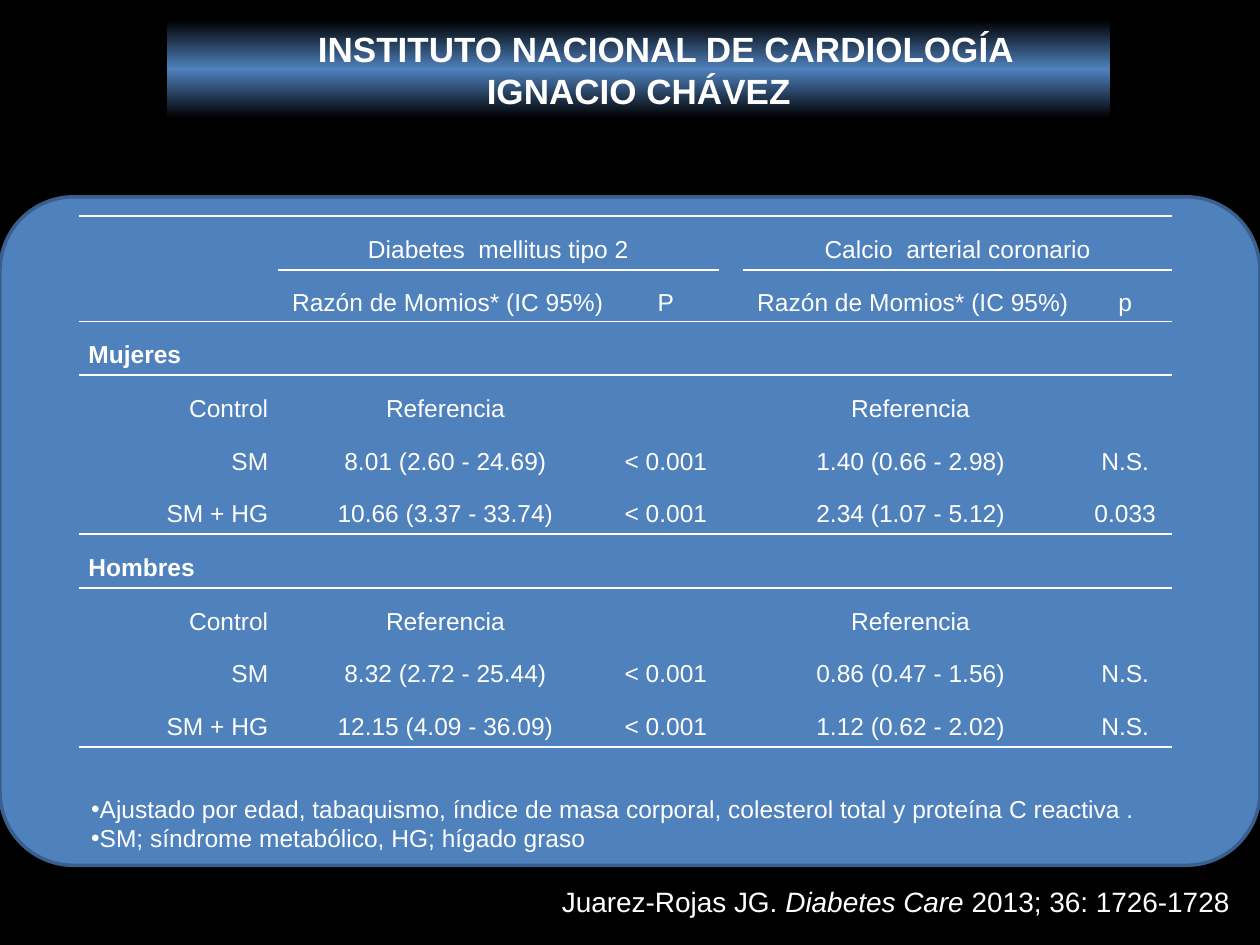
"""Build a slide with a table of odds ratios for diabetes and coronary calcium."""
from copy import deepcopy
from typing import NamedTuple

from lxml import etree
from pptx import Presentation
from pptx.dml.color import RGBColor
from pptx.enum.shapes import MSO_SHAPE
from pptx.enum.text import MSO_ANCHOR, MSO_AUTO_SIZE, PP_ALIGN
from pptx.oxml.ns import qn
from pptx.util import Pt

LEFT, MID, RIGHT = PP_ALIGN.LEFT, PP_ALIGN.CENTER, PP_ALIGN.RIGHT
CENTRE = MSO_ANCHOR.MIDDLE
FIXED = MSO_AUTO_SIZE.NONE
RECT, ROUND = MSO_SHAPE.RECTANGLE, MSO_SHAPE.ROUNDED_RECTANGLE
BLACK = RGBColor(0x00, 0x00, 0x00)
WHITE = RGBColor(0xFF, 0xFF, 0xFF)
BLUE = RGBColor(0x4F, 0x81, 0xBD)
NAVY = RGBColor(0x3A, 0x5F, 0x8C)
PLAIN = "{2D5ABB26-0587-4C30-8999-92F81FD0307C}"
WIDTHS = (113.8, 191.5, 60.5, 13, 191.5, 53.8)
TALL, SHORT = 30.7, 29.5
GAP = 3


class Row(NamedTuple):
    label: str = ""
    odds: str = ""
    p: str = ""
    gap: str = ""
    calc: str = ""
    calc_p: str = ""


RATIO = "Razón de Momios* (IC 95%)"
CONTROL = Row("Control", "Referencia", calc="Referencia")
ROWS = (
    Row(odds="Diabetes  mellitus tipo 2", calc="Calcio  arterial coronario"),
    Row("", RATIO, "P", "", RATIO, "p"),
    Row("Mujeres"),
    CONTROL,
    Row("SM", "8.01 (2.60 - 24.69)", "< 0.001", "", "1.40 (0.66 - 2.98)", "N.S."),
    Row("SM + HG", "10.66 (3.37 - 33.74)", "< 0.001", "", "2.34 (1.07 - 5.12)", "0.033"),
    Row("Hombres"),
    CONTROL,
    Row("SM", "8.32 (2.72 - 25.44)", "< 0.001", "", "0.86 (0.47 - 1.56)", "N.S."),
    Row("SM + HG", "12.15 (4.09 - 36.09)", "< 0.001", "", "1.12 (0.62 - 2.02)", "N.S."),
)
GROUPS = (2, 6)
NOTES = (
    "Ajustado por edad, tabaquismo, índice de masa corporal, "
    "colesterol total y proteína C reactiva .\n"
    "SM; síndrome metabólico, HG; hígado graso"
)


def write(frame, text: str, *, size: float = 14, bold: bool = False,
          align=LEFT, space: float = 1, bullet: str = "") -> None:
    """Fill a frame line by line, with underscores around italic words."""
    for i, line in enumerate(text.split("\n")):
        para = frame.add_paragraph() if i else frame.paragraphs[0]
        para.alignment, para.line_spacing = align, space
        if bullet:
            props = para._p.get_or_add_pPr()
            etree.SubElement(props, qn("a:buFont"), typeface="Arial")
            etree.SubElement(props, qn("a:buChar"), char=bullet)
        for j, part in enumerate(line.split("_")):
            run = para.add_run()
            run.text = part
            font = run.font
            font.name, font.size = "Arial", Pt(size)
            font.bold, font.italic = bold, j % 2 == 1
            font.color.rgb = WHITE


def block(slide, kind, left: float, top: float, width: float, height: float):
    """Add a flat blue shape without a line."""
    shape = slide.shapes.add_shape(kind, Pt(left), Pt(top), Pt(width), Pt(height))
    shape.shadow.inherit = False
    shape.fill.solid()
    shape.fill.fore_color.rgb = BLUE
    shape.line.fill.background()
    return shape


def banner(slide) -> None:
    """Format the title as a band that fades to black."""
    title = slide.shapes.title
    title.left, title.top, title.width, title.height = Pt(95.5), Pt(11.5), Pt(539), Pt(56)
    fill = title.fill
    fill.gradient()
    fill.gradient_angle = 270
    stops = title._element.spPr.find(".//" + qn("a:gsLst"))
    stops.insert(1, deepcopy(stops[0]))
    for stop, place, tint in zip(fill.gradient_stops, (0, 0.5, 1), (BLACK, BLUE, BLACK)):
        stop.position, stop.color.rgb = place, tint
    frame = title.text_frame
    frame.auto_size, frame.vertical_anchor = FIXED, CENTRE
    frame.margin_left = frame.margin_right = Pt(8)
    frame.margin_top = frame.margin_bottom = Pt(4)
    write(frame, "\tINSTITUTO NACIONAL DE CARDIOLOGÍA \nIGNACIO CHÁVEZ",
          size=20, bold=True, align=MID)


def ruled(edge: int, col: int) -> bool:
    """Tell whether a rule runs along the top of this row."""
    return edge in (0, *GROUPS, len(ROWS)) or edge == 1 and col not in (0, GAP)


def border(cell, row: int, col: int) -> None:
    """Draw the rules above and below a cell."""
    props = cell._tc.get_or_add_tcPr()
    sides = [tag for tag, edge in (("a:lnT", row), ("a:lnB", row + 1)) if ruled(edge, col)]
    for i, tag in enumerate(sides):
        line = etree.Element(qn(tag), w=str(Pt(1)))
        fill = etree.SubElement(line, qn("a:solidFill"))
        etree.SubElement(fill, qn("a:srgbClr"), val=str(WHITE))
        props.insert(i, line)


def aligned(row: int, col: int):
    """Return the alignment of a cell."""
    if col == 0:
        return LEFT if row in GROUPS else RIGHT
    return RIGHT if row == 1 and col in (1, 4) else MID


def results(slide) -> None:
    """Add the table of ratios."""
    frame = slide.shapes.add_table(len(ROWS), len(WIDTHS), Pt(45), Pt(123.5),
                                   Pt(sum(WIDTHS)), Pt(304))
    table = frame.table
    table.first_row = table.horz_banding = False
    table._tbl.tblPr.find(qn("a:tableStyleId")).text = PLAIN
    for column, width in zip(table.columns, WIDTHS):
        column.width = Pt(width)
    for r, row in enumerate(ROWS):
        table.rows[r].height = Pt(SHORT if r in (1, 4, 8) else TALL)
        for c, text in enumerate(row):
            cell = table.cell(r, c)
            cell.fill.background()
            cell.vertical_anchor = CENTRE
            cell.margin_left = cell.margin_right = Pt(5.5)
            cell.margin_top = cell.margin_bottom = 0
            border(cell, r, c)
            if text:
                write(cell.text_frame, text, bold=r in GROUPS,
                      align=aligned(r, c), space=1.5)
    for c in (1, 4):
        table.cell(0, c).merge(table.cell(0, c + 1))


def notes(slide) -> None:
    """Add the footnotes on a translucent strip."""
    strip = block(slide, RECT, 45, 450, 624, 41)
    tint = strip._element.spPr.find(".//" + qn("a:srgbClr"))
    etree.SubElement(tint, qn("a:alpha"), val="58000")
    strip.text_frame.word_wrap = True
    write(strip.text_frame, NOTES, bullet="•")


def main() -> None:
    """Build and save the slide."""
    deck = Presentation()
    deck.slide_width, deck.slide_height = Pt(720), Pt(540)
    slide = deck.slides.add_slide(deck.slide_layouts[5])
    slide.background.fill.solid()
    slide.background.fill.fore_color.rgb = BLACK
    panel = block(slide, ROUND, 0, 112.5, 720, 382)
    panel.adjustments[0] = 0.11
    panel.line.color.rgb, panel.line.width = NAVY, Pt(2)
    banner(slide)
    results(slide)
    notes(slide)
    source = slide.shapes.add_textbox(Pt(314), Pt(502), Pt(400), Pt(26.5))
    source.text_frame.word_wrap = False
    write(source.text_frame, "Juarez-Rojas JG. _Diabetes Care_ 2013; 36: 1726-1728", size=16)
    deck.save("out.pptx")


if __name__ == "__main__":
    main()
